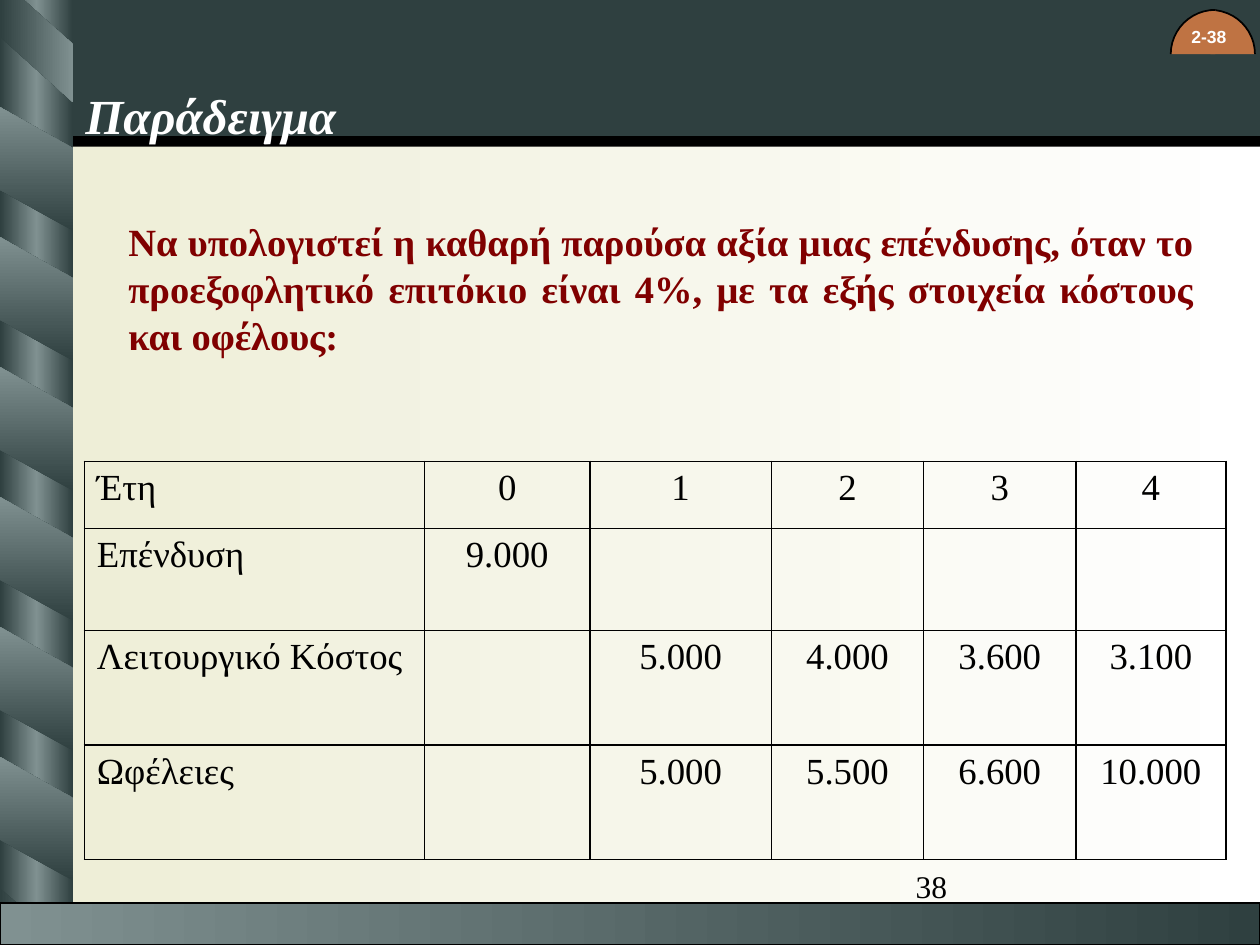
from lxml import etree
from pptx import Presentation
from pptx import util as u
from pptx.dml import color
from pptx.enum import shapes, text
from pptx.oxml import ns

Cm, Pt = u.Cm, u.Pt
KIND, ALIGN, ANCHOR = shapes.MSO_SHAPE, text.PP_ALIGN, text.MSO_ANCHOR
SERIF = "Times New Roman"
DARK, LIGHT, BLACK, WHITE = "2F4040", "809191", "000000", "FFFFFF"
RUST, RED, CREAM = "BF7343", "800000", "EDEDD5"

TITLE = "Παράδειγμα"
TASK = ("Να υπολογιστεί η καθαρή παρούσα αξία μιας επένδυσης, όταν το "
        "προεξοφλητικό επιτόκιο είναι 4%, με τα εξής στοιχεία κόστους και οφέλους:")
ROWS = [
    ["Έτη", "0", "1", "2", "3", "4"],
    ["Επένδυση", "9.000", "", "", "", ""],
    ["Λειτουργικό Κόστος", "", "5.000", "4.000", "3.600", "3.100"],
    ["Ωφέλειες", "", "5.000", "5.500", "6.600", "10.000"],
]
WIDTHS = [6.86, 3.33, 3.66, 3.07, 3.07, 3.02]
HEIGHTS = [1.35, 2.06, 2.31, 2.31]
BANDS, STEP = 6, 2.62
FOLDS = [
    [(0, 0), (0, 0.74), (1.47, 2.06), (1.47, 0.89), (0.48, 0)],
    [(1.27, 19.02), (0, 17.91), (0, 19.05)],
]

deck = Presentation()
deck.slide_width, deck.slide_height = Cm(25.4), Cm(19.05)
slide = deck.slides.add_slide(deck.slide_layouts[6])


def rgb(code):
    return color.RGBColor.from_string(code)


def blend(fill, root, codes):
    fill.gradient()
    fill.gradient_angle = 0
    stops = root.find(".//" + ns.qn("a:gsLst"))
    for stop in list(stops):
        stops.remove(stop)
    for i, code in enumerate(codes):
        pos = str(round(100000 * i / (len(codes) - 1)))
        stop = etree.SubElement(stops, ns.qn("a:gs"), pos=pos)
        etree.SubElement(stop, ns.qn("a:srgbClr"), val=code)


def paint(shape, codes, edge=False):
    shape.shadow.inherit = False
    if len(codes) > 1:
        blend(shape.fill, shape._element, codes)
    else:
        shape.fill.solid()
        shape.fill.fore_color.rgb = rgb(codes[0])
    if edge:
        shape.line.color.rgb = rgb(BLACK)
        shape.line.width = Pt(1)
    else:
        shape.line.fill.background()
    return shape


def block(kind, box, codes, edge=False):
    shape = slide.shapes.add_shape(kind, *map(Cm, box))
    return paint(shape, codes, edge)


def write(para, words, size, code, face=SERIF, bold=False, slant=False):
    run = para.add_run()
    run.text = words
    font = run.font
    font.name, font.size, font.bold, font.italic = face, Pt(size), bold, slant
    font.color.rgb = rgb(code)


def label(box, words, size, code, align=ALIGN.LEFT, anchor=ANCHOR.TOP, wrap=True, **style):
    frame = slide.shapes.add_textbox(*map(Cm, box)).text_frame
    frame.word_wrap, frame.vertical_anchor = wrap, anchor
    para = frame.paragraphs[0]
    para.alignment = align
    write(para, words, size, code, **style)
    return para


def border(cell):
    props = cell._tc.get_or_add_tcPr()
    for i, side in enumerate(("lnL", "lnR", "lnT", "lnB")):
        line = etree.Element(ns.qn("a:" + side), w=str(Pt(1)))
        fill = etree.SubElement(line, ns.qn("a:solidFill"))
        etree.SubElement(fill, ns.qn("a:srgbClr"), val=BLACK)
        props.insert(i, line)


blend(slide.background.fill, slide._element, [CREAM, WHITE])
block(KIND.RECTANGLE, (1.47, 2.74, 23.93, 0.22), [BLACK])
block(KIND.RECTANGLE, (0, 0, 1.47, 19.05), [DARK, LIGHT, DARK])
block(KIND.RECTANGLE, (1.47, 0, 23.93, 2.74), [DARK])

for i in range(BANDS):
    band = block(KIND.PARALLELOGRAM, (-0.51, 2.67 + i * STEP, 2.49, 1.47), [DARK, LIGHT])
    band.rotation = 270
    band.adjustments[0] = 0.56

for first, *rest in FOLDS:
    path = slide.shapes.build_freeform(*map(Cm, first), scale=1)
    path.add_line_segments([(Cm(x), Cm(y)) for x, y in rest], close=True)
    paint(path.convert_to_shape(), [DARK, LIGHT])

block(KIND.RECTANGLE, (0, 18.21, 25.4, 0.84), [LIGHT, DARK], True)

for left, turn in ((23.5, 0), (23.6, 180)):
    arc = block(KIND.ARC, (left, 0.2, 1.8, 1.78), [RUST], True)
    if turn:
        arc.rotation = turn
        arc._element.spPr.xfrm.set("flipV", "1")

label((23.7, 0.2, 1.27, 1.07), "2-38", 10, WHITE, ALIGN.RIGHT, ANCHOR.MIDDLE,
      False, face="Arial", bold=True)
label((1.47, 0, 22.66, 4.65), TITLE, 28, WHITE, anchor=ANCHOR.MIDDLE, bold=True, slant=True)
task = label((2.34, 4.24, 21.97, 3.89), TASK, 22, RED, ALIGN.JUSTIFY, bold=True)
task.line_spacing, task.space_before = Pt(27), Pt(5)

grid = slide.shapes.add_table(len(ROWS), len(WIDTHS), Cm(1.7), Cm(9.3),
                              Cm(sum(WIDTHS)), Cm(sum(HEIGHTS))).table
grid.first_row = grid.horz_banding = False
for col, width in zip(grid.columns, WIDTHS):
    col.width = Cm(width)
for r, (row, height) in enumerate(zip(ROWS, HEIGHTS)):
    grid.rows[r].height = Cm(height)
    for c, words in enumerate(row):
        cell = grid.cell(r, c)
        cell.fill.background()
        border(cell)
        if words:
            para = cell.text_frame.paragraphs[0]
            para.alignment = ALIGN.CENTER if c else ALIGN.JUSTIFY
            write(para, words, 21, BLACK)

label((18.21, 17.35, 5.92, 1.32), "38", 18, BLACK)
deck.save("out.pptx")
